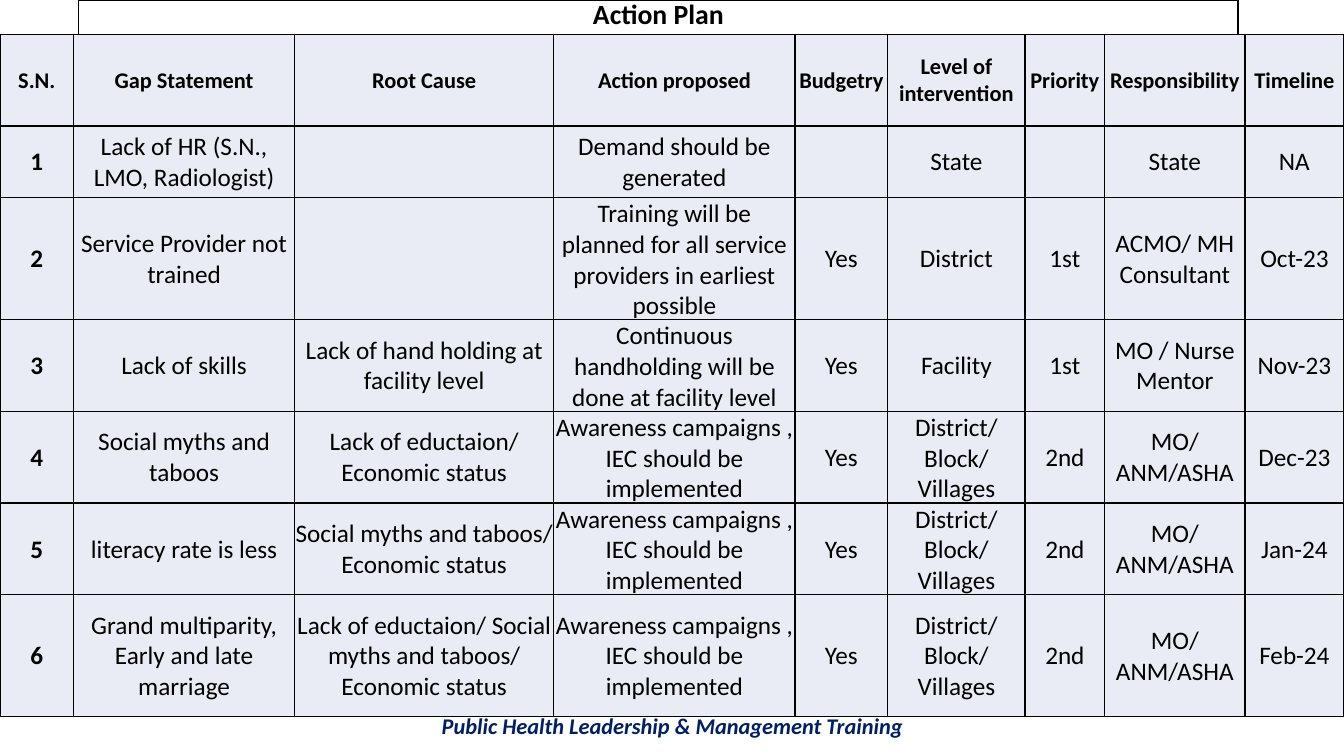
import pptx
import pptx.dml.color
import pptx.enum.text
import pptx.oxml
import pptx.oxml.ns
import pptx.util

Inches, Pt = pptx.util.Inches, pptx.util.Pt
RGBColor = pptx.dml.color.RGBColor
CENTER = pptx.enum.text.PP_ALIGN.CENTER
MIDDLE = pptx.enum.text.MSO_ANCHOR.MIDDLE

BLACK = RGBColor(0x00, 0x00, 0x00)
NAVY = RGBColor(0x00, 0x20, 0x60)
CELL_FILL = RGBColor(0xE9, 0xEB, 0xF5)

COL_WIDTHS = [0.73, 2.19, 2.57, 2.39, 0.92, 1.36, 0.79, 1.39, 0.98]
ROW_HEIGHTS = [0.91, 0.71, 1.21, 0.91, 0.91, 0.91, 1.21]

HEADERS = ["S.N.", "Gap Statement", "Root Cause", "Action proposed", "Budgetry",
           "Level of intervention", "Priority", "Responsibility", "Timeline"]
CAMPAIGN = "Awareness campaigns , IEC should be implemented"
ALL_LEVELS = "District/\nBlock/\nVillages"
FIELD_STAFF = "MO/ ANM/ASHA"
ACTIONS = [
    ["Lack of HR (S.N., LMO, Radiologist)", "", "Demand should be generated",
     "", "State", "", "State", "NA"],
    ["Service Provider not trained", "",
     "Training will be planned for all service providers in earliest possible",
     "Yes", "District", "1st", "ACMO/ MH Consultant", "Oct-23"],
    ["Lack of skills", "Lack of hand holding at facility level",
     "Continuous handholding will be done at facility level",
     "Yes", "Facility", "1st", "MO / Nurse Mentor", "Nov-23"],
    ["Social myths and taboos", "Lack of eductaion/ Economic status",
     CAMPAIGN, "Yes", ALL_LEVELS, "2nd", FIELD_STAFF, "Dec-23"],
    ["literacy rate is less", "Social myths and taboos/ Economic status",
     CAMPAIGN, "Yes", ALL_LEVELS, "2nd", FIELD_STAFF, "Jan-24"],
    ["Grand multiparity, Early and late marriage",
     "Lack of eductaion/ Social myths and taboos/ Economic status",
     CAMPAIGN, "Yes", ALL_LEVELS, "2nd", FIELD_STAFF, "Feb-24"],
]


def format_paragraph(p, size, color=BLACK, bold=False, italic=False):
    p.alignment = CENTER
    p.font.name = "Calibri"
    p.font.size = Pt(size)
    p.font.bold = bold
    p.font.italic = italic
    p.font.color.rgb = color


def add_title(slide, left, top, width, height):
    sp = slide.shapes.title
    sp.left, sp.top = Inches(left), Inches(top)
    sp.width, sp.height = Inches(width), Inches(height)
    sp.line.color.rgb = BLACK
    sp.line.width = Pt(1)
    tf = sp.text_frame
    tf.text = "Action Plan"
    tf.auto_size = pptx.enum.text.MSO_AUTO_SIZE.NONE
    tf.vertical_anchor = MIDDLE
    p = tf.paragraphs[0]
    format_paragraph(p, 19.8, bold=True)
    p.line_spacing = 0.7
    p.space_before = Pt(0)


def add_footer(slide, left, top, width, height):
    sp = slide.shapes.add_textbox(Inches(left), Inches(top), Inches(width), Inches(height))
    tf = sp.text_frame
    tf.word_wrap = True
    tf.auto_size = pptx.enum.text.MSO_AUTO_SIZE.SHAPE_TO_FIT_TEXT
    tf.text = "Public Health Leadership & Management Training"
    format_paragraph(tf.paragraphs[0], 16, NAVY, bold=True, italic=True)


def set_borders(cell):
    """Draw a 1 pt black line on all four sides of the cell."""
    tcPr = cell._tc.get_or_add_tcPr()
    for i, side in enumerate(("lnL", "lnR", "lnT", "lnB")):
        tcPr.insert(i, pptx.oxml.parse_xml(
            f'<a:{side} {pptx.oxml.ns.nsdecls("a")} w="{Pt(1)}">'
            f'<a:solidFill><a:srgbClr val="{BLACK}"/></a:solidFill></a:{side}>'))


def fill_cell(cell, text, size, bold):
    cell.text = text
    cell.vertical_anchor = MIDDLE
    cell.margin_left = cell.margin_right = cell.margin_top = Inches(0.01)
    cell.margin_bottom = 0
    cell.fill.solid()
    cell.fill.fore_color.rgb = CELL_FILL
    for p in cell.text_frame.paragraphs:
        format_paragraph(p, size, bold=bold)
    set_borders(cell)


def add_action_table(slide, left, top, width, height):
    rows = [HEADERS] + [[str(n)] + action for n, action in enumerate(ACTIONS, 1)]
    table = slide.shapes.add_table(len(rows), len(HEADERS), Inches(left), Inches(top),
                                   Inches(width), Inches(height)).table
    for column, share in zip(table.columns, COL_WIDTHS):
        column.width = Inches(width * share / sum(COL_WIDTHS))
    for row, share in zip(table.rows, ROW_HEIGHTS):
        row.height = Inches(height * share / sum(ROW_HEIGHTS))
    for r, texts in enumerate(rows):
        for c, text in enumerate(texts):
            fill_cell(table.cell(r, c), text, 18 if r else 16, r == 0 or c == 0)


def main():
    prs = pptx.Presentation()
    prs.slide_width, prs.slide_height = Inches(13.33), Inches(7.5)
    slide = prs.slides.add_slide(prs.slide_layouts[5])
    add_footer(slide, 0.92, 7.02, 11.5, 0.37)
    add_title(slide, 0.78, 0, 11.5, 0.34)
    add_action_table(slide, 0, 0.34, 13.33, 6.77)
    prs.save("out.pptx")


if __name__ == "__main__":
    main()
